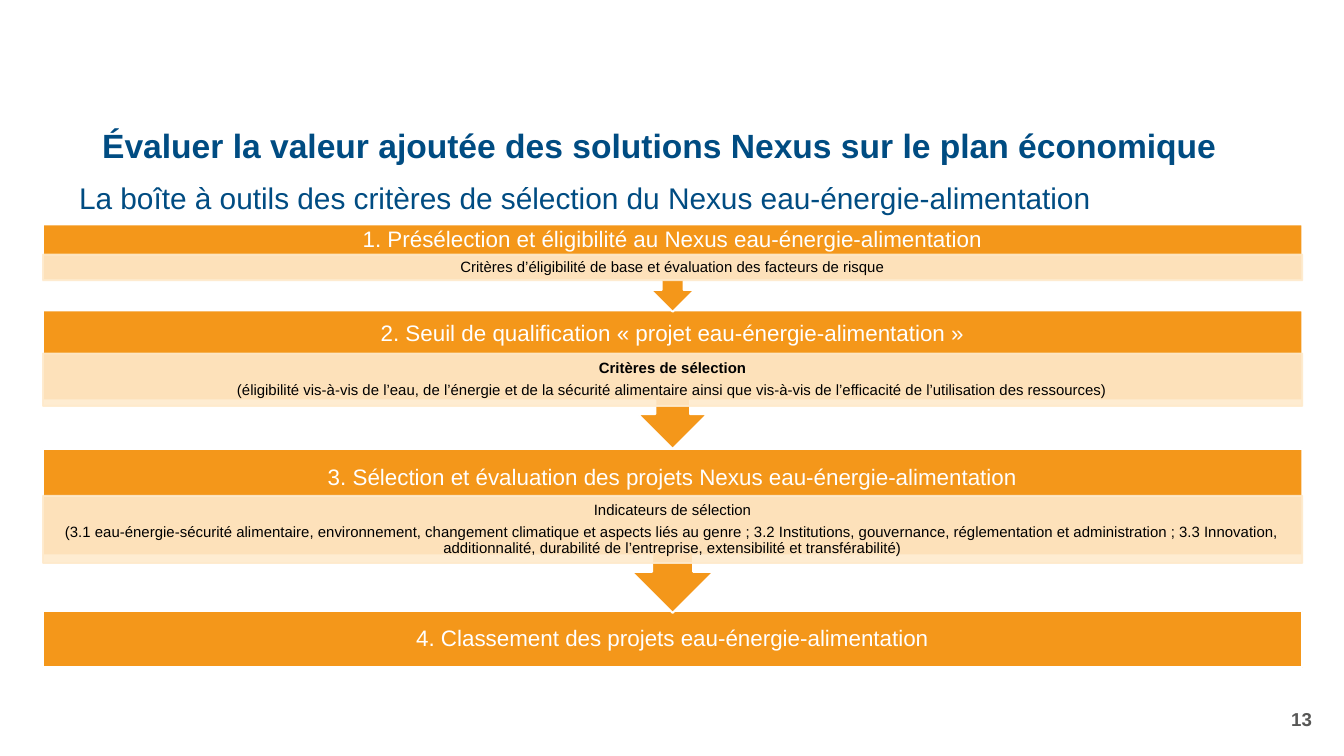
from lxml import etree
from pptx import Presentation
from pptx import util as u
from pptx.dml.color import RGBColor
from pptx.enum import shapes, text
from pptx.oxml.ns import qn

COLORS = {"blue": "004C82", "orange": "F4971A", "cream": "FEEACC",
          "white": "FFFFFF", "black": "000000", "grey": "575756"}
LEFT, WIDTH = 23.04, 674.64


def write(shape, lines, size, color, align, insets, bold=False, spacing=0.9):
    frame = shape.text_frame
    frame.word_wrap = True
    frame.auto_size = text.MSO_AUTO_SIZE.NONE
    frame.vertical_anchor = text.MSO_ANCHOR.MIDDLE
    frame.margin_left = frame.margin_right = u.Pt(insets[0])
    frame.margin_top = frame.margin_bottom = u.Pt(insets[1])
    frame.text = "\n".join(lines)
    for paragraph in frame.paragraphs:
        paragraph.alignment = align
        paragraph.line_spacing = spacing
        paragraph.space_before = u.Pt(0)
        if len(lines) > 1:
            paragraph.space_after = u.Pt(3)
        for run in paragraph.runs:
            run.font.name = "Arial"
            run.font.size = u.Pt(size)
            run.font.bold = bold
            run.font.color.rgb = RGBColor.from_string(COLORS[color])


def add_block(slide, kind, top, height, fill, line, opacity=100):
    shape = slide.shapes.add_shape(kind, u.Pt(LEFT), u.Pt(top), u.Pt(WIDTH), u.Pt(height))
    shape.shadow.inherit = False
    shape.fill.solid()
    shape.fill.fore_color.rgb = RGBColor.from_string(COLORS[fill])
    shape.line.color.rgb = RGBColor.from_string(COLORS[line])
    shape.line.width = u.Pt(1)
    if opacity < 100:
        for color in shape.element.spPr.iter(qn("a:srgbClr")):
            etree.SubElement(color, qn("a:alpha"), val=str(opacity * 1000))
    return shape


presentation = Presentation()
presentation.slide_width = u.Pt(720)
presentation.slide_height = u.Pt(405)
slide = presentation.slides.add_slide(presentation.slide_layouts[5])
center, left, right = text.PP_ALIGN.CENTER, text.PP_ALIGN.LEFT, text.PP_ALIGN.RIGHT

title = slide.shapes.title
title.left, title.top, title.width, title.height = u.Pt(47.5), u.Pt(57.6), u.Pt(674.64), u.Pt(42.5)
write(title, ["Évaluer la valeur ajoutée des solutions Nexus sur le plan économique"],
      18, "blue", left, (7.2, 3.6), bold=True)

subtitle = slide.shapes.add_textbox(u.Pt(35.3), u.Pt(96.5), u.Pt(674.64), u.Pt(21.6))
write(subtitle, ["La boîte à outils des critères de sélection du Nexus eau-énergie-alimentation"],
      16, "blue", left, (7.2, 0))

ranking = add_block(slide, shapes.MSO_SHAPE.RECTANGLE, 327.6, 30, "orange", "white")
write(ranking, ["4. Classement des projets eau-énergie-alimentation"], 12, "white", center, (6.5, 6.5))

steps = [
    (240.5, 87.84, 30.96, 265.68, 36,
     "3. Sélection et évaluation des projets Nexus eau-énergie-alimentation",
     ["Indicateurs de sélection",
      "(3.1 eau-énergie-sécurité alimentaire, environnement, changement climatique et aspects "
      "liés au genre ; 3.2 Institutions, gouvernance, réglementation et administration ; "
      "3.3 Innovation, additionnalité, durabilité de l’entreprise, extensibilité et "
      "transférabilité)"]),
    (166.32, 74.16, 25.92, 189.36, 28.08,
     "2. Seuil de qualification « projet eau-énergie-alimentation »",
     ["Critères de sélection",
      "(éligibilité vis-à-vis de l’eau, de l’énergie et de la sécurité alimentaire ainsi que "
      "vis-à-vis de l’efficacité de l’utilisation des ressources)"]),
    (120.24, 46.8, 16.56, 136.4, 13.68,
     "1. Présélection et éligibilité au Nexus eau-énergie-alimentation",
     ["Critères d’éligibilité de base et évaluation des facteurs de risque"]),
]
for top, height, heading_height, band_top, band_height, heading, criteria in steps:
    add_block(slide, shapes.MSO_SHAPE.DOWN_ARROW_CALLOUT, top, height, "orange", "white")
    label = slide.shapes.add_textbox(u.Pt(LEFT), u.Pt(top), u.Pt(WIDTH), u.Pt(heading_height))
    write(label, [heading], 12, "white", center, (6.5, 6.5))
    band = add_block(slide, shapes.MSO_SHAPE.RECTANGLE, band_top, band_height,
                     "cream", "cream", opacity=90)
    write(band, criteria, 8, "black", center, (4.3, 0.7))
    if criteria[0] == "Critères de sélection":
        band.text_frame.paragraphs[0].runs[0].font.bold = True

number = slide.shapes.add_textbox(u.Pt(547.9), u.Pt(374.4), u.Pt(162), u.Pt(21.6))
write(number, ["13"], 10, "grey", right, (7.2, 3.6), bold=True, spacing=1.0)

presentation.save("out.pptx")
